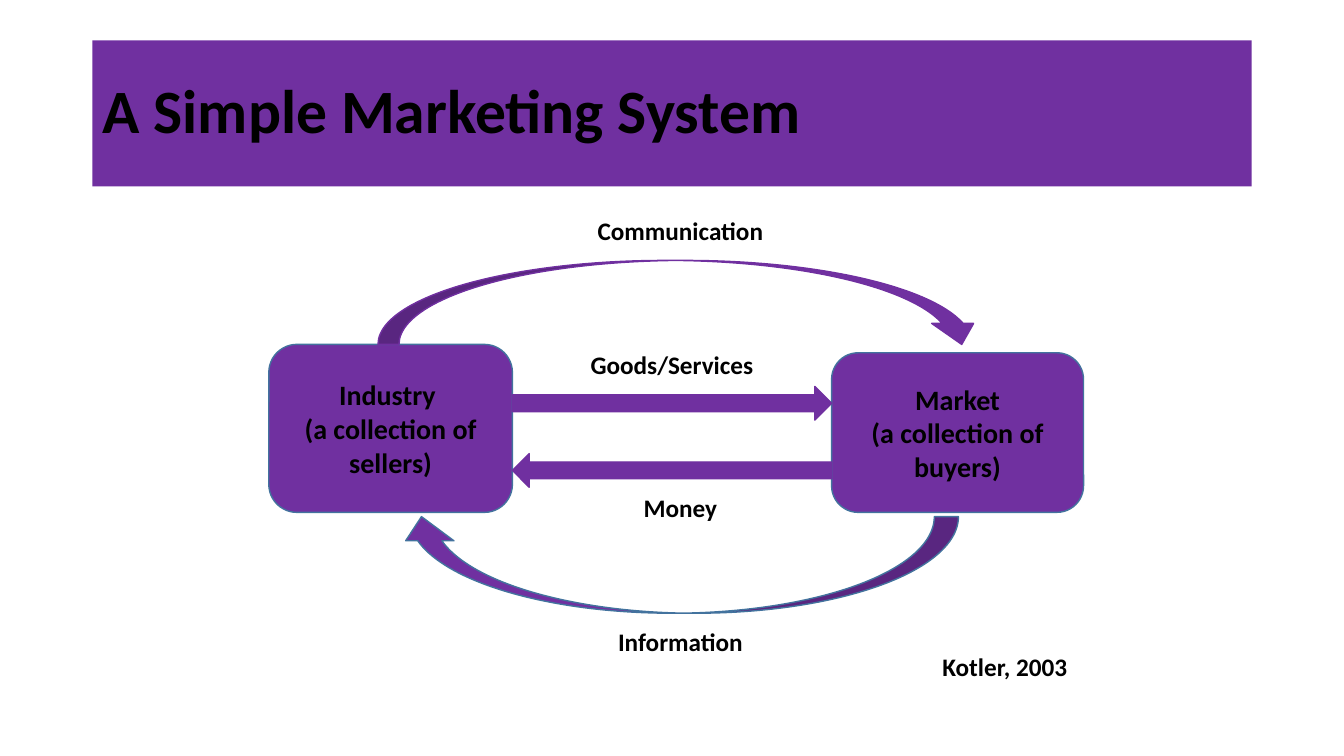
from pptx import Presentation
from pptx.dml.color import RGBColor
from pptx.enum.shapes import MSO_SHAPE as Shape
from pptx.enum.text import MSO_ANCHOR as Anchor, MSO_AUTO_SIZE as AutoSize, PP_ALIGN as Align
from pptx.util import Inches, Pt

PURPLE = RGBColor(0x70, 0x30, 0xA0)
STEEL = RGBColor(0x43, 0x73, 0x9E)
BLACK = RGBColor(0, 0, 0)
COLUMNS, ROWS = 160, 90
LABEL_ROWS = 4.8


def write(frame, text, size=18, align=Align.CENTER, anchor=Anchor.TOP,
          spacing=1.0, fit=AutoSize.NONE):
    frame.text = text
    frame.word_wrap = True
    frame.auto_size = fit
    frame.vertical_anchor = anchor
    for paragraph in frame.paragraphs:
        paragraph.alignment = align
        paragraph.line_spacing = spacing
        font = paragraph.font
        font.name, font.size, font.bold = "Calibri", Pt(size), True
        font.color.rgb = BLACK


class Diagram:
    def __init__(self, deck):
        self.width, self.height = deck.slide_width, deck.slide_height
        self.slide = deck.slides.add_slide(deck.slide_layouts[5])

    def place(self, column, row, columns, rows):
        across, down = self.width / COLUMNS, self.height / ROWS
        return (round(column * across), round(row * down),
                round(columns * across), round(rows * down))

    def title(self, text, *cell):
        banner = self.slide.shapes.title
        banner.left, banner.top, banner.width, banner.height = self.place(*cell)
        banner.fill.solid()
        banner.fill.fore_color.rgb = PURPLE
        write(banner.text_frame, text, size=44, align=Align.LEFT,
              anchor=Anchor.MIDDLE, spacing=0.9)

    def block(self, kind, *cell, outline=PURPLE, rotation=0):
        block = self.slide.shapes.add_shape(kind, *self.place(*cell))
        block.shadow.inherit = False
        block.fill.solid()
        block.fill.fore_color.rgb = PURPLE
        block.line.color.rgb = outline
        block.line.width = Pt(1)
        block.rotation = rotation
        return block

    def party(self, text, *cell):
        party = self.block(Shape.ROUNDED_RECTANGLE, *cell, outline=STEEL)
        write(party.text_frame, text, size=20, anchor=Anchor.MIDDLE)

    def label(self, text, column, row, columns, align=Align.CENTER):
        label = self.slide.shapes.add_textbox(*self.place(column, row, columns, LABEL_ROWS))
        write(label.text_frame, text, align=align, fit=AutoSize.SHAPE_TO_FIT_TEXT)


def main():
    deck = Presentation()
    deck.slide_width, deck.slide_height = Inches(13.33), Inches(7.5)
    diagram = Diagram(deck)

    diagram.title("A Simple Marketing System", 11, 4.8, 138, 17.4)
    diagram.party("Industry \n(a collection of sellers)", 32, 41, 29, 20)
    diagram.party("Market\n(a collection of buyers)", 99, 42, 30, 19)

    diagram.block(Shape.RIGHT_ARROW, 61, 46, 38, 4)
    diagram.block(Shape.LEFT_ARROW, 61, 54, 38, 4)
    diagram.block(Shape.CURVED_DOWN_ARROW, 45, 31, 72, 10)
    diagram.block(Shape.CURVED_DOWN_ARROW, 47.3, 61.5, 66.8, 11.5,
                  outline=STEEL, rotation=180)

    for flow, column, row, columns in (
        ("Goods/Services", 67, 41, 26),
        ("Money", 72, 58, 18),
        ("Information", 70, 74, 22),
        ("Communication", 69, 25, 24),
    ):
        diagram.label(flow, column, row, columns)
    diagram.label("Kotler, 2003", 111, 77, 19, align=Align.LEFT)

    deck.save("out.pptx")


if __name__ == "__main__":
    main()
